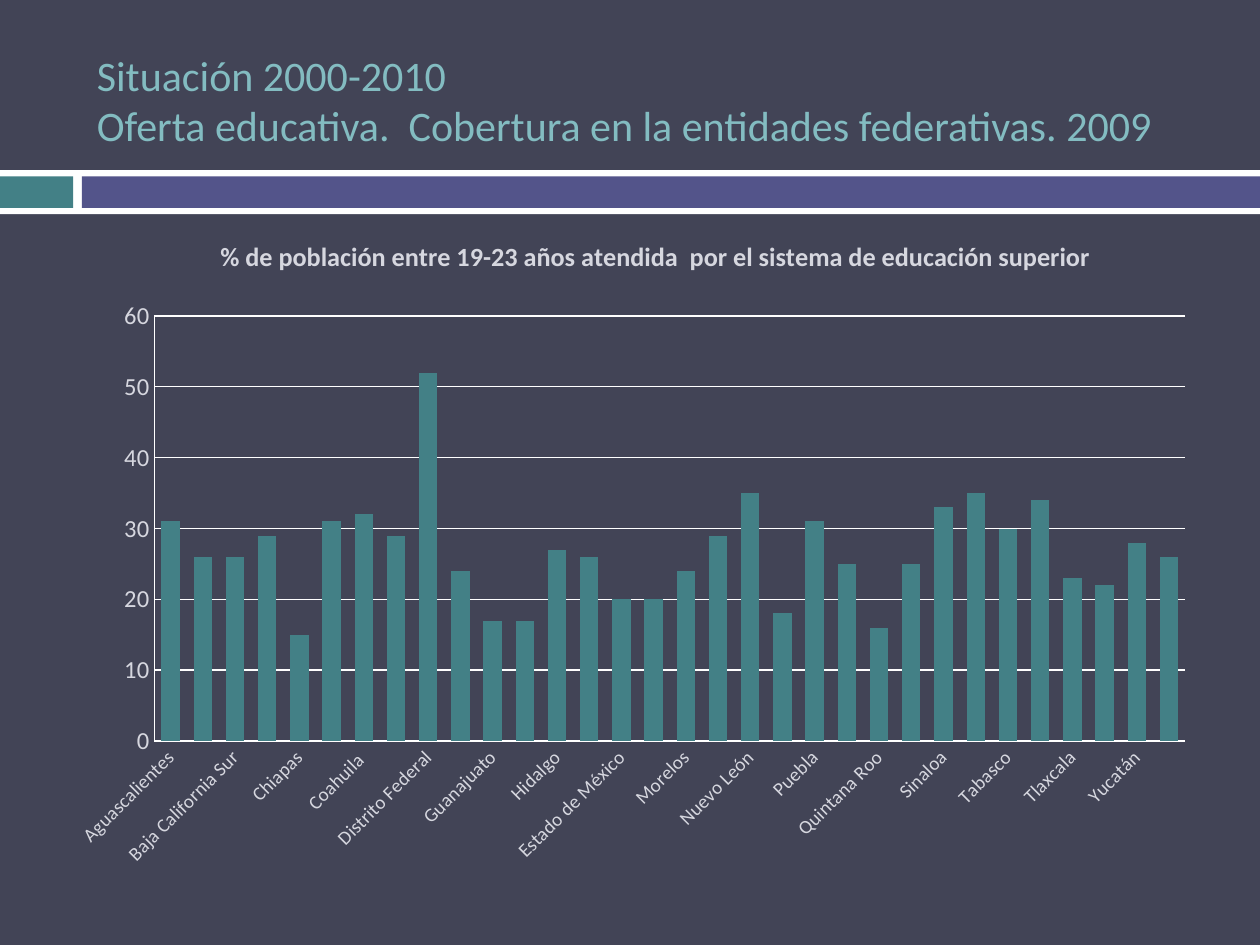
from dataclasses import dataclass

from lxml import etree
from pptx import Presentation
from pptx.chart.data import CategoryChartData
from pptx.dml.color import RGBColor
from pptx.enum.chart import XL_CHART_TYPE as ChartType, XL_TICK_MARK as TickMark
from pptx.enum.shapes import MSO_SHAPE as Shape
from pptx.enum.text import MSO_ANCHOR as Anchor
from pptx.oxml.ns import qn
from pptx.util import Inches, Pt


@dataclass(frozen=True)
class Theme:
    font: str = "Calibri"
    background: RGBColor = RGBColor.from_string("424456")
    white: RGBColor = RGBColor.from_string("FFFFFF")
    teal: RGBColor = RGBColor.from_string("438086")
    purple: RGBColor = RGBColor.from_string("53548A")
    heading: RGBColor = RGBColor.from_string("83BCC1")
    chart_text: RGBColor = RGBColor.from_string("D6D7DF")
    heading_size: Pt = Pt(24)
    chart_size: Pt = Pt(18)
    chart_title_size: Pt = Pt(15)
    value_size: Pt = Pt(14)
    state_size: Pt = Pt(11)


THEME = Theme()

HEADING = ["Situación 2000-2010",
           "Oferta educativa.  Cobertura en la entidades federativas. 2009"]
CHART_TITLE = "% de población entre 19-23 años atendida  por el sistema de educación superior "

COVERAGE = {
    "Aguascalientes": 31, "Baja California": 26, "Baja California Sur": 26,
    "Campeche": 29, "Chiapas": 15, "Chihuahua": 31, "Coahuila ": 32,
    "Colima": 29, "Distrito Federal": 52, "Durango": 24, "Guanajuato": 17,
    "Guerrero": 17, "Hidalgo": 27, "Jalisco": 26, "Estado de México": 20,
    "Michoacán ": 20, "Morelos": 24, "Nayarit": 29, "Nuevo León": 35,
    "Oaxaca": 18, "Puebla": 31, "Querétaro ": 25, "Quintana Roo": 16,
    "San Luis Potosí": 25, "Sinaloa": 33, "Sonora": 35, "Tabasco": 30,
    "Tamaulipas": 34, "Tlaxcala": 23, "Veracruz ": 22, "Yucatán": 28,
    "Zacatecas": 26,
}


def add_band(slide, left, top, width, height, color):
    band = slide.shapes.add_shape(
        Shape.RECTANGLE, Inches(left), Inches(top), Inches(width), Inches(height))
    band.shadow.inherit = False
    band.fill.solid()
    band.fill.fore_color.rgb = color
    band.line.fill.background()


def style_font(font, size, color, bold=False):
    font.name = THEME.font
    font.size = size
    font.bold = bold
    font.color.rgb = color


def add_heading(slide, lines):
    heading = slide.shapes.add_textbox(
        Inches(0.67), Inches(0.25), Inches(8.92), Inches(1.08))
    frame = heading.text_frame
    frame.word_wrap = True
    frame.vertical_anchor = Anchor.MIDDLE
    paragraph = frame.paragraphs[0]
    for index, line in enumerate(lines):
        if index:
            paragraph.add_line_break()
        run = paragraph.add_run()
        run.text = line
        style_font(run.font, THEME.heading_size, THEME.heading)


def make_layout(**settings):
    """Manual chart layout, in fractions of the chart's size."""
    layout = etree.Element(qn("c:layout"))
    manual = etree.SubElement(layout, qn("c:manualLayout"))
    for tag, value in settings.items():
        etree.SubElement(manual, qn(f"c:{tag}")).set("val", str(value))
    return layout


def place(element, index, layout):
    for old in element.findall(qn("c:layout")):
        element.remove(old)
    element.insert(index, layout)


def style_axis(axis, size):
    axis.major_tick_mark = axis.minor_tick_mark = TickMark.NONE
    style_font(axis.tick_labels.font, size, THEME.chart_text)
    axis.format.line.color.rgb = THEME.white
    axis.format.line.width = Pt(1)


def add_coverage_chart(slide):
    data = CategoryChartData()
    data.categories = list(COVERAGE)
    data.add_series("Series 1", list(COVERAGE.values()))
    chart = slide.shapes.add_chart(
        ChartType.COLUMN_CLUSTERED, Inches(0.43), Inches(1.75),
        Inches(9.15), Inches(5.23), data).chart
    style_font(chart.font, THEME.chart_size, THEME.chart_text)
    chart.has_legend = False

    # Title
    chart.has_title = True
    title_run = chart.chart_title.text_frame.paragraphs[0].add_run()
    title_run.text = CHART_TITLE
    style_font(title_run.font, THEME.chart_title_size, THEME.chart_text, bold=True)
    place(chart.chart_title._element, 1,
          make_layout(xMode="edge", yMode="edge", x=0.14, y=0.02))

    # Columns
    plot = chart.plots[0]
    plot.vary_by_categories = False
    plot.gap_width = 75
    plot.overlap = -25
    columns = plot.series[0]
    columns.invert_if_negative = False
    columns.format.fill.solid()
    columns.format.fill.fore_color.rgb = THEME.teal
    plot_area = chart._chartSpace.chart.plotArea
    place(plot_area, 0, make_layout(
        layoutTarget="inner", xMode="edge", yMode="edge",
        x=0.087, y=0.145, w=0.894, h=0.645))

    # Value axis
    values = chart.value_axis
    style_axis(values, THEME.value_size)
    values.minimum_scale, values.maximum_scale, values.major_unit = 0, 60, 10
    values.has_major_gridlines = True
    values.major_gridlines.format.line.color.rgb = THEME.white
    values.major_gridlines.format.line.width = Pt(0.75)

    # State axis: slanted names, every second one shown
    states = chart.category_axis
    style_axis(states, THEME.state_size)
    axis_xml = states._element
    axis_xml.find(qn("c:txPr")).find(qn("a:bodyPr")).set("rot", "-2700000")
    skip = etree.Element(qn("c:tickLblSkip"))
    skip.set("val", "2")
    axis_xml.find(qn("c:noMultiLvlLbl")).addprevious(skip)


def main():
    deck = Presentation()
    deck.slide_width, deck.slide_height = Inches(10), Inches(7.5)
    slide = deck.slides.add_slide(deck.slide_layouts[6])
    slide.background.fill.solid()
    slide.background.fill.fore_color.rgb = THEME.background

    # Divider below the heading
    add_band(slide, 0, 1.35, 10, 0.35, THEME.white)
    add_band(slide, 0, 1.4, 0.58, 0.25, THEME.teal)
    add_band(slide, 0.65, 1.4, 9.35, 0.25, THEME.purple)

    add_heading(slide, HEADING)
    add_coverage_chart(slide)
    deck.save("out.pptx")


if __name__ == "__main__":
    main()
